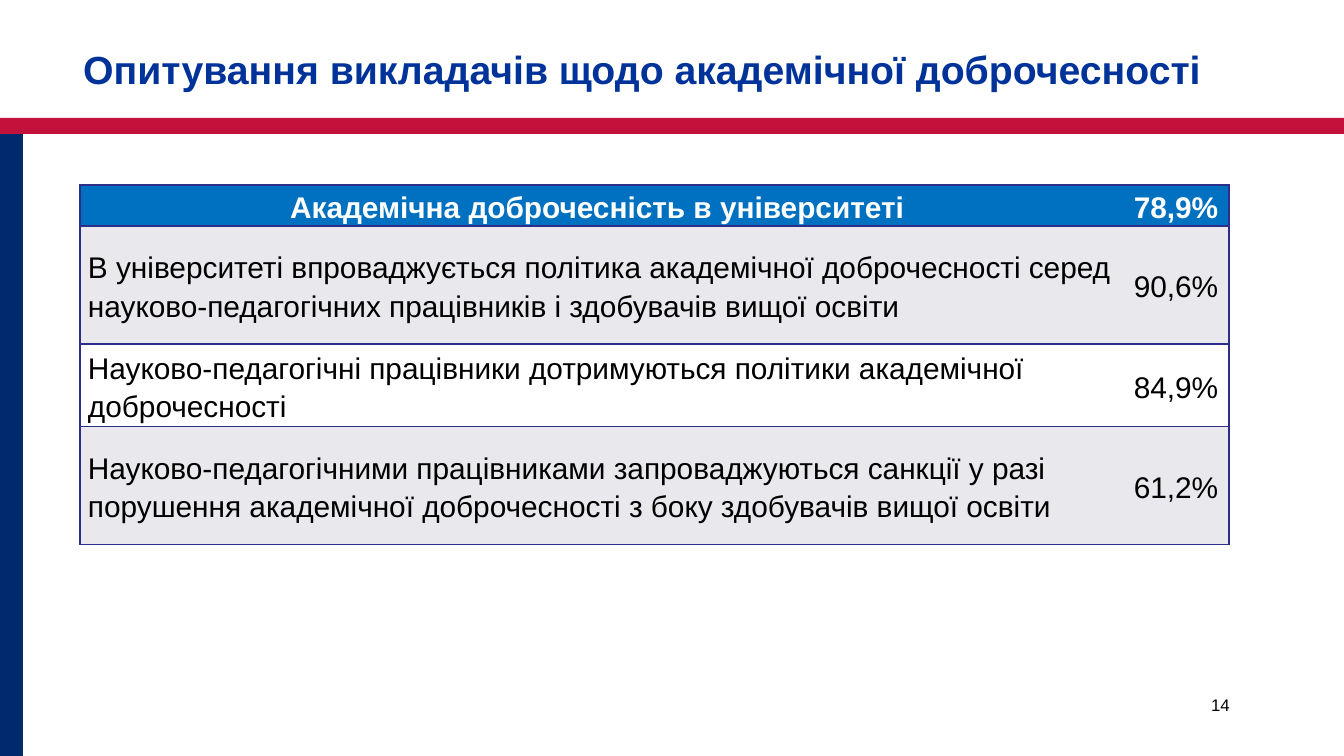
"""Build the slide with the staff survey on academic integrity."""
import dataclasses

import lxml.etree
import pptx
import pptx.dml.color
import pptx.enum.shapes
import pptx.enum.text
import pptx.oxml.ns
import pptx.util

ALIGN = pptx.enum.text.PP_ALIGN
ANCHOR = pptx.enum.text.MSO_ANCHOR
EMU_PER_PX = 914400 / 134.4
PLAIN_TABLE_STYLE = "{2D5ABB26-0587-4C30-8999-92F81FD0307C}"


@dataclasses.dataclass(frozen=True)
class Theme:
    """Colours, font and type sizes of the slide."""

    font: str = "Arial"
    navy: str = "002A6C"
    red: str = "C2113A"
    title: str = "003399"
    header: str = "0070C0"
    band: str = "E8E8ED"
    white: str = "FFFFFF"
    black: str = "000000"
    border: str = "2D2D8A"
    title_size: int = 21
    table_size: int = 16
    number_size: int = 9
    border_width: int = 1


THEME = Theme()
SURVEY = [
    ("Академічна доброчесність в університеті ", "78,9%"),
    ("В університеті впроваджується політика академічної доброчесності серед "
     "науково-педагогічних працівників і здобувачів вищої освіти", "90,6%"),
    ("Науково-педагогічні працівники дотримуються політики академічної "
     "доброчесності", "84,9%"),
    ("Науково-педагогічними працівниками запроваджуються санкції у разі "
     "порушення академічної доброчесності з боку здобувачів вищої освіти", "61,2%"),
]
COLUMN_WIDTHS = [1043, 106]
ROW_HEIGHTS = [38, 118, 78, 118]


def px(length):
    """Turn pixels into EMU."""
    return pptx.util.Emu(round(length * EMU_PER_PX))


def rgb(colour):
    """Turn a hex string into a colour."""
    return pptx.dml.color.RGBColor.from_string(colour)


def set_all(target, values):
    """Set the attributes given in a dict."""
    for name, value in values.items():
        setattr(target, name, value)


def write(frame, text, size, colour, bold=False, align=ALIGN.LEFT, spacing=1.0):
    """Write one formatted paragraph into a text frame."""
    frame.word_wrap = True
    para = frame.paragraphs[0]
    set_all(para, {"alignment": align, "line_spacing": spacing})
    span = para.add_run()
    span.text = text
    set_all(span.font, {"name": THEME.font, "size": pptx.util.Pt(size), "bold": bold})
    span.font.color.rgb = rgb(colour)


def add_bar(page, place, colour):
    """Add a plain coloured bar."""
    bar = page.shapes.add_shape(
        pptx.enum.shapes.MSO_SHAPE.RECTANGLE, *map(px, place))
    bar.shadow.inherit = False
    bar.fill.solid()
    bar.fill.fore_color.rgb = rgb(colour)
    bar.line.fill.background()


def add_text(page, place, text, anchor=ANCHOR.TOP, **style):
    """Add a text box with one paragraph."""
    box = page.shapes.add_textbox(*map(px, place))
    box.text_frame.vertical_anchor = anchor
    write(box.text_frame, text, **style)


def add_borders(cell, sides):
    """Draw border lines on the named sides of a cell."""
    properties = cell._tc.get_or_add_tcPr()
    for side in sides:
        line = lxml.etree.SubElement(
            properties, pptx.oxml.ns.qn(f"a:ln{side}"),
            w=str(pptx.util.Pt(THEME.border_width)))
        fill = lxml.etree.SubElement(line, pptx.oxml.ns.qn("a:solidFill"))
        lxml.etree.SubElement(fill, pptx.oxml.ns.qn("a:srgbClr"), val=THEME.border)


def fill_cell(cell, text, row, column):
    """Format one survey cell by its row and column."""
    header = row == 0
    set_all(cell, {
        "vertical_anchor": ANCHOR.MIDDLE,
        "margin_left": px(8), "margin_right": px(8),
        "margin_top": 0, "margin_bottom": 0,
    })
    add_borders(cell, "RTB" if column else "LTB")
    cell.fill.solid()
    cell.fill.fore_color.rgb = rgb(
        THEME.header if header else THEME.band if row % 2 else THEME.white)
    write(cell.text_frame, text, THEME.table_size,
          THEME.white if header else THEME.black, bold=header,
          align=ALIGN.CENTER if header or column else ALIGN.LEFT, spacing=1.15)


def add_survey(page, left, top):
    """Add the survey table."""
    table = page.shapes.add_table(
        len(SURVEY), len(COLUMN_WIDTHS), px(left), px(top),
        px(sum(COLUMN_WIDTHS)), px(sum(ROW_HEIGHTS))).table
    set_all(table, {"first_row": False, "horz_banding": False})
    style = table._tbl.tblPr.find(pptx.oxml.ns.qn("a:tableStyleId"))
    style.text = PLAIN_TABLE_STYLE
    for column, width in zip(table.columns, COLUMN_WIDTHS):
        column.width = px(width)
    for row, height in zip(table.rows, ROW_HEIGHTS):
        row.height = px(height)
    for row, texts in enumerate(SURVEY):
        for column, text in enumerate(texts):
            fill_cell(table.cell(row, column), text, row, column)


def main():
    """Build and save the deck."""
    deck = pptx.Presentation()
    set_all(deck, {"slide_width": px(1344), "slide_height": px(756)})
    page = deck.slides.add_slide(deck.slide_layouts[6])
    add_bar(page, (0, 134, 23, 622), THEME.navy)
    add_bar(page, (0, 118, 1344, 16), THEME.red)
    add_text(page, (70, 35, 1175, 67),
             "Опитування викладачів щодо академічної доброчесності",
             anchor=ANCHOR.MIDDLE, size=THEME.title_size,
             colour=THEME.title, bold=True)
    add_text(page, (964, 688, 279, 51), "14", size=THEME.number_size,
             colour=THEME.black, align=ALIGN.RIGHT)
    add_survey(page, 80, 185)
    deck.save("out.pptx")


if __name__ == "__main__":
    main()
